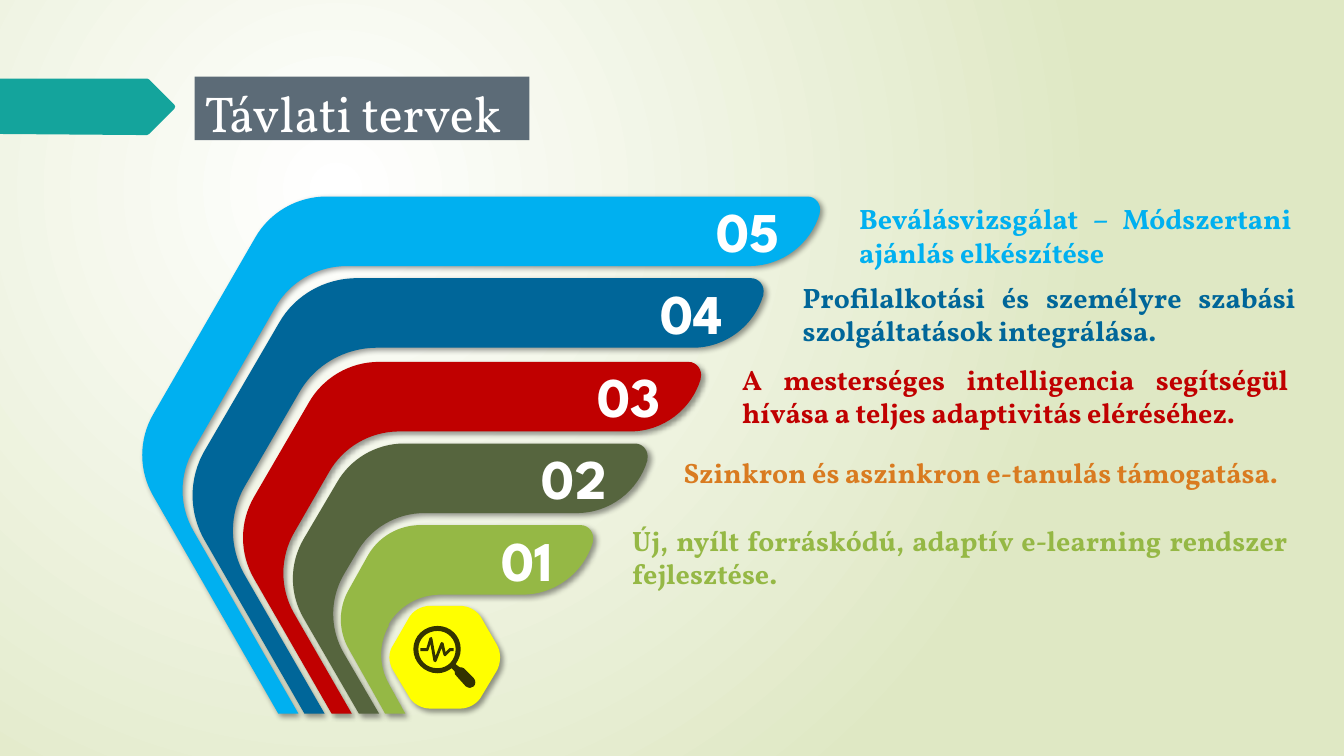
from lxml import etree
from pptx import Presentation
from pptx.dml.color import RGBColor
from pptx.enum.text import MSO_ANCHOR, MSO_AUTO_SIZE, PP_ALIGN
from pptx.oxml.ns import qn
from pptx.util import Inches, Pt

WHITE = RGBColor(0xFF, 0xFF, 0xFF)
PALE_GREEN = RGBColor(0xDF, 0xE8, 0xC4)
TEAL = RGBColor(0x14, 0xA4, 0x9C)
SLATE = RGBColor(0x5C, 0x6B, 0x77)
YELLOW = RGBColor(0xFF, 0xFF, 0x00)
BLACK = RGBColor(0x00, 0x00, 0x00)
LIGHT_BLUE = RGBColor(0x00, 0xB0, 0xF0)
DARK_BLUE = RGBColor(0x00, 0x66, 0x99)
RED = RGBColor(0xC0, 0x00, 0x00)
OLIVE = RGBColor(0x56, 0x65, 0x3E)
ORANGE = RGBColor(0xD9, 0x7B, 0x20)
LIME = RGBColor(0x95, 0xB8, 0x45)

BODY_FONT = "Vollkorn"
NUMBER_FONT = "League Spartan"

# Number, colour, (top, right, neck x, neck y, flat x, elbow x, elbow top, elbow bottom, foot)
BANDS = [
    ("02", OLIVE, (4.40, 6.42, 3.34, 4.79, 4.01, 3.01, 5.35, 6.13, 3.56)),
    ("03", RED, (3.59, 6.95, 3.06, 4.00, 3.76, 2.52, 4.93, 5.74, 3.29)),
    ("04", DARK_BLUE, (2.76, 7.57, 2.77, 3.20, 3.54, 2.03, 4.47, 5.36, 3.02)),
    ("05", LIGHT_BLUE, (1.95, 8.13, 2.53, 2.36, 3.24, 1.52, 4.11, 4.92, 2.76)),
    ("01", LIME, (5.21, 5.88, 3.65, 5.51, 4.17, 3.46, 5.85, 6.44, 3.82)),
]

# Text, colour, (left, top, width, height)
PLANS = [
    ("Beválásvizsgálat – Módszertani ajánlás elkészítése", LIGHT_BLUE, (8.52, 1.95, 4.39, 0.77)),
    ("Profilalkotási és személyre szabási szolgáltatások integrálása.", DARK_BLUE,
     (7.96, 2.73, 4.99, 0.77)),
    ("A mesterséges intelligencia segítségül hívása a teljes adaptivitás eléréséhez.", RED,
     (7.36, 3.54, 5.52, 0.77)),
    ("Szinkron és aszinkron e-tanulás támogatása.", ORANGE, (6.78, 4.47, 6.09, 0.44)),
    ("Új, nyílt forráskódú, adaptív e-learning rendszer fejlesztése.", LIME,
     (6.27, 5.14, 6.60, 0.77)),
]

# Outlines: two numbers are a point, six are a cubic curve
ARROW = [(1.73, 1.08), (1.48, 1.33), (1.47, 1.34, 1.47, 1.34, 1.46, 1.34), (1.36, 1.34),
         (0, 1.33), (0, 0.78), (1.36, 0.78), (1.46, 0.78),
         (1.47, 0.78, 1.47, 0.79, 1.48, 0.79), (1.73, 1.04),
         (1.74, 1.05, 1.74, 1.06, 1.73, 1.08)]
HEXAGON = [(4.56, 6.01), (4.27, 6.01), (4.18, 6.01, 4.09, 6.06, 4.05, 6.14), (3.90, 6.40),
           (3.85, 6.47, 3.85, 6.57, 3.90, 6.65), (4.05, 6.90),
           (4.09, 6.98, 4.18, 7.03, 4.27, 7.03), (4.56, 7.03),
           (4.65, 7.03, 4.74, 6.98, 4.78, 6.90), (4.93, 6.65),
           (4.97, 6.57, 4.97, 6.47, 4.93, 6.40), (4.78, 6.14),
           (4.74, 6.06, 4.65, 6.01, 4.56, 6.01)]
PULSE = [(4.28, 6.32), (4.28, 6.32, 4.29, 6.33, 4.29, 6.34), (4.32, 6.51), (4.37, 6.38),
         (4.37, 6.38, 4.37, 6.38, 4.38, 6.37), (4.39, 6.37, 4.39, 6.38, 4.40, 6.38),
         (4.42, 6.47), (4.45, 6.44), (4.45, 6.43, 4.46, 6.43, 4.46, 6.43), (4.50, 6.43),
         (4.50, 6.46), (4.47, 6.46), (4.42, 6.51), (4.41, 6.51, 4.40, 6.51, 4.40, 6.50),
         (4.38, 6.43), (4.33, 6.56), (4.33, 6.57, 4.32, 6.57, 4.32, 6.57),
         (4.31, 6.57, 4.31, 6.56, 4.30, 6.56), (4.27, 6.39), (4.25, 6.45),
         (4.25, 6.46, 4.25, 6.46, 4.24, 6.46), (4.17, 6.46), (4.17, 6.43), (4.23, 6.43),
         (4.26, 6.33), (4.27, 6.33, 4.27, 6.33, 4.28, 6.32)]
GLASS = [(4.34, 6.26), (4.23, 6.26, 4.15, 6.34, 4.15, 6.44), (4.15, 6.55, 4.23, 6.63, 4.34, 6.63),
         (4.44, 6.63, 4.52, 6.55, 4.52, 6.44), (4.52, 6.34, 4.44, 6.26, 4.34, 6.26)]
LENS = [(4.34, 6.21), (4.47, 6.21, 4.57, 6.31, 4.57, 6.44), (4.57, 6.50, 4.55, 6.54, 4.52, 6.59),
        (4.56, 6.62), (4.57, 6.62, 4.59, 6.62, 4.60, 6.63), (4.70, 6.73),
        (4.72, 6.75, 4.72, 6.79, 4.70, 6.81), (4.68, 6.83, 4.65, 6.83, 4.62, 6.81),
        (4.53, 6.71), (4.51, 6.70, 4.51, 6.68, 4.51, 6.66), (4.48, 6.63),
        (4.44, 6.66, 4.39, 6.68, 4.34, 6.68), (4.21, 6.68, 4.10, 6.57, 4.10, 6.44),
        (4.10, 6.31, 4.21, 6.21, 4.34, 6.21)]


def band_path(top, right, neck_x, neck_y, flat_x, elbow_x, elbow_top, elbow_bottom, foot):
    """Outline of a band: outer edge down to the foot, inner edge back up to the tip."""
    thick, base = 0.69, 7.08
    height, width, drop = elbow_bottom - elbow_top, flat_x - neck_x, neck_y - top
    bulge, reach = 0.18 * height, 0.31 * height
    inner_x, inner_top, inner_bottom = elbow_x + 0.4, elbow_top + 0.35, elbow_bottom + 0.35
    turn_x, turn_y, low = neck_x + 0.2, neck_y + thick, top + thick
    return [
        (neck_x, neck_y), (elbow_x, elbow_top),
        (elbow_x - bulge, elbow_top + reach, elbow_x - bulge, elbow_bottom - reach,
         elbow_x, elbow_bottom),
        (foot, base), (foot + 0.2, base), (inner_x, inner_bottom),
        (inner_x - bulge, inner_bottom - reach, inner_x - bulge, inner_top + reach,
         inner_x, inner_top),
        (turn_x, turn_y),
        (turn_x + 0.2 * width, turn_y - 0.61 * drop, turn_x + 0.58 * width, low,
         turn_x + width, low),
        (right - 0.70, low),
        (right - 0.37, low, right - 0.09, top + 0.47, right, top + 0.17),
        (right, top + 0.16),
        (right + 0.02, top + 0.08, right - 0.04, top, right - 0.12, top),
        (flat_x, top),
        (flat_x - 0.42 * width, top, neck_x + 0.2 * width, neck_y - 0.61 * drop, neck_x, neck_y),
    ]


def extent(path):
    """Ends of all segments and the middles of the curves."""
    points = [item[-2:] for item in path]
    for (x0, y0), item in zip(points[:-1], path[1:]):
        if len(item) == 6:
            x1, y1, x2, y2, x3, y3 = item
            points.append(((x0 + 3 * x1 + 3 * x2 + x3) / 8, (y0 + 3 * y1 + 3 * y2 + y3) / 8))
    return points


def write(tf, text, font=BODY_FONT, size=20, color=WHITE, bold=False, align=PP_ALIGN.LEFT,
          anchor=MSO_ANCHOR.TOP, margins=(0.1, 0.05, 0.1, 0.05)):
    tf.word_wrap = True
    tf.vertical_anchor = anchor
    tf.margin_left, tf.margin_top, tf.margin_right, tf.margin_bottom = map(Inches, margins)
    p = tf.paragraphs[0]
    p.alignment = align
    r = p.add_run()
    r.text = text
    r.font.name, r.font.size, r.font.bold = font, Pt(size), bold
    r.font.color.rgb = color


class Deck:
    def __init__(self):
        self.prs = Presentation()
        self.prs.slide_width, self.prs.slide_height = Inches(13.33), Inches(7.5)
        self.slide = self.prs.slides.add_slide(self.prs.slide_layouts[5])

    def background(self, inner, outer):
        fill = self.slide.background.fill
        fill.gradient()
        for stop, color in zip(fill.gradient_stops, (inner, outer)):
            stop.color.rgb = color
        grad = self.slide.element.find(".//" + qn("a:gradFill"))
        radial = etree.Element(qn("a:path"), path="circle")
        etree.SubElement(radial, qn("a:fillToRect"), l="50000", t="50000", r="100000", b="100000")
        grad.replace(grad.find(qn("a:lin")), radial)

    def title(self, text, box):
        sp = self.slide.shapes.title
        sp.left, sp.top, sp.width, sp.height = map(Inches, box)
        sp.fill.solid()
        sp.fill.fore_color.rgb = SLATE
        sp.text_frame.auto_size = MSO_AUTO_SIZE.NONE
        write(sp.text_frame, text, size=36)

    def outline(self, *paths, color, shadow=False, alpha=None):
        xs, ys = zip(*[point for path in paths for point in extent(path)])
        left, top, right, bottom = map(Inches, (min(xs), min(ys), max(xs), max(ys)))
        builder = self.slide.shapes.build_freeform(left, top, scale=1.0)
        builder.add_line_segments([(right, bottom)])
        sp = builder.convert_to_shape()
        # Lines and true curves, measured from the corner of the shape
        geometry = sp.element.find(".//" + qn("a:path"))
        for child in list(geometry):
            geometry.remove(child)
        for path in paths:
            for i, item in enumerate(path):
                tag = "a:cubicBezTo" if len(item) == 6 else "a:lnTo" if i else "a:moveTo"
                step = etree.SubElement(geometry, qn(tag))
                for x, y in zip(item[::2], item[1::2]):
                    etree.SubElement(step, qn("a:pt"), x=str(Inches(x) - left),
                                     y=str(Inches(y) - top))
            etree.SubElement(geometry, qn("a:close"))
        sp.fill.solid()
        sp.fill.fore_color.rgb = color
        sp.line.fill.background()
        sp.shadow.inherit = False
        if alpha:
            clr = sp.element.spPr.find(qn("a:solidFill"))[0]
            etree.SubElement(clr, qn("a:alpha"), val=str(alpha * 1000))
        if shadow:
            effects = sp.element.spPr.find(qn("a:effectLst"))
            outer = etree.SubElement(effects, qn("a:outerShdw"), blurRad=str(Pt(4)),
                                     dist=str(Pt(3)), dir="2700000", algn="tl", rotWithShape="0")
            clr = etree.SubElement(outer, qn("a:srgbClr"), val=str(BLACK))
            etree.SubElement(clr, qn("a:alpha"), val="40000")
        return sp

    def band(self, number, color, dims):
        sp = self.outline(band_path(*dims), color=color, shadow=True)
        write(sp.text_frame, number, font=NUMBER_FONT, size=40, bold=True,
              align=PP_ALIGN.RIGHT, margins=(0.04, 0, 0.4, 0.04))

    def plan(self, text, color, box):
        tf = self.slide.shapes.add_textbox(*map(Inches, box)).text_frame
        write(tf, text, color=color, bold=True, align=PP_ALIGN.JUSTIFY,
              anchor=MSO_ANCHOR.MIDDLE, margins=(0, 0.05, 0.1, 0.05))
        tf.auto_size = MSO_AUTO_SIZE.SHAPE_TO_FIT_TEXT


def main():
    deck = Deck()
    # Background, arrow and title
    deck.background(WHITE, PALE_GREEN)
    deck.outline(ARROW, color=TEAL)
    deck.title("Távlati tervek", (1.93, 0.76, 3.32, 0.63))
    # Hexagon, numbered bands and magnifier
    deck.outline(HEXAGON, color=YELLOW, shadow=True)
    for number, color, dims in BANDS:
        deck.band(number, color, dims)
    deck.outline(PULSE, GLASS, LENS, color=BLACK, alpha=80)
    # Plan descriptions
    for text, color, box in PLANS:
        deck.plan(text, color, box)
    deck.prs.save("out.pptx")


if __name__ == "__main__":
    main()
